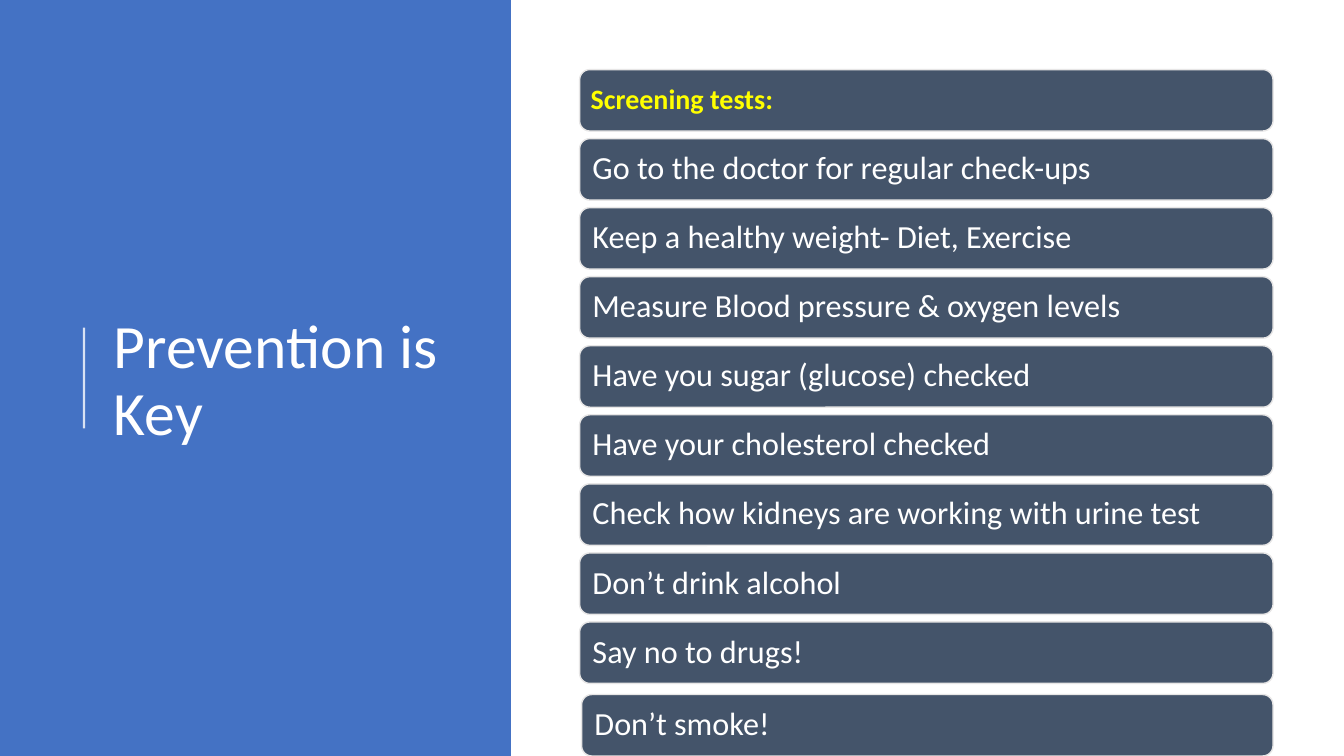
from lxml.etree import SubElement
from pptx import Presentation
from pptx.dml.color import RGBColor
from pptx.enum.shapes import MSO_CONNECTOR as Connector, MSO_SHAPE as Shape
from pptx.enum.text import MSO_ANCHOR as Anchor, MSO_AUTO_SIZE as AutoSize, PP_ALIGN as Align
from pptx.oxml.ns import qn
from pptx.util import Inches, Pt

COLORS = {
    "panel": "4472C4",
    "bar": "44546A",
    "outline": "E7E6E6",
    "text": "FFFFFF",
    "heading": "FFFF00",
}
COLUMNS, ROWS = 160, 90
CELL = Inches(1) / 12

HEADING = "Screening tests:"
ADVICE = [
    "Go to the doctor for regular check-ups",
    "Keep a healthy weight- Diet, Exercise",
    "Measure Blood pressure & oxygen levels",
    "Have you sugar (glucose) checked",
    "Have your cholesterol checked",
    "Check how kidneys are working with urine test",
    "Don’t drink alcohol",
    "Say no to drugs!",
]
LAST_ADVICE = "Don’t smoke!"


def cells(*counts):
    return [round(count * CELL) for count in counts]


def color(name):
    return RGBColor.from_string(COLORS[name])


def write(shape, text, size=23, ink="text", bold=False, font="Calibri", inset=0.1):
    frame = shape.text_frame
    frame.word_wrap = True
    frame.auto_size = AutoSize.NONE
    frame.vertical_anchor = Anchor.MIDDLE
    frame.margin_left = frame.margin_right = Inches(inset)
    frame.margin_top = frame.margin_bottom = Inches(inset)
    para = frame.paragraphs[0]
    para.alignment = Align.LEFT
    para.line_spacing = 0.9
    span = para.add_run()
    span.text = text
    span.font.name = font
    span.font.size = Pt(size)
    span.font.bold = bold
    span.font.color.rgb = color(ink)


class SlideBuilder:
    def __init__(self, deck):
        self.page = deck.slides.add_slide(deck.slide_layouts[5])

    def block(self, kind, place, fill, outline=None):
        box = self.page.shapes.add_shape(kind, *cells(*place))
        box.shadow.inherit = False
        box.fill.solid()
        box.fill.fore_color.rgb = color(fill)
        if outline:
            box.line.color.rgb = color(outline)
            box.line.width = Pt(1)
        else:
            box.line.fill.background()
        return box

    def bar(self, text, left, top, width, **style):
        box = self.block(Shape.ROUNDED_RECTANGLE, (left, top, width, 7.32), "bar", "outline")
        write(box, text, **style)

    def rule(self, start, end, ink="text", opacity=80):
        line = self.page.shapes.add_connector(Connector.STRAIGHT, *cells(*start, *end))
        line.line.color.rgb = color(ink)
        line.line.width = Pt(1.5)
        properties = line.element.spPr
        ink_node = properties.find(".//" + qn("a:srgbClr"))
        SubElement(ink_node, qn("a:alpha"), val=str(opacity * 1000))
        SubElement(properties, qn("a:effectLst"))

    def title(self, text, place):
        title = self.page.shapes.title
        title.left, title.top, title.width, title.height = cells(*place)
        write(title, text, size=44)
        title.element.getparent().append(title.element)


def main():
    deck = Presentation()
    deck.slide_width, deck.slide_height = cells(COLUMNS, ROWS)
    slide = SlideBuilder(deck)
    slide.block(Shape.RECTANGLE, (0, 0, 60.84, ROWS), "panel")
    slide.rule((10, 51), (10, 39))
    slide.title("Prevention is Key", (12.36, 9.36, 44.28, 72.24))

    left, top, width, pitch = 69, 8.28, 82.56, 8.22
    slide.bar(HEADING, left, top, width, size=20, ink="heading", bold=True, inset=0.08)
    for row, advice in enumerate(ADVICE, start=1):
        slide.bar(advice, left, top + row * pitch, width)
    slide.bar(LAST_ADVICE, 69.24, 82.68, 82.32)
    deck.save("out.pptx")


if __name__ == "__main__":
    main()
